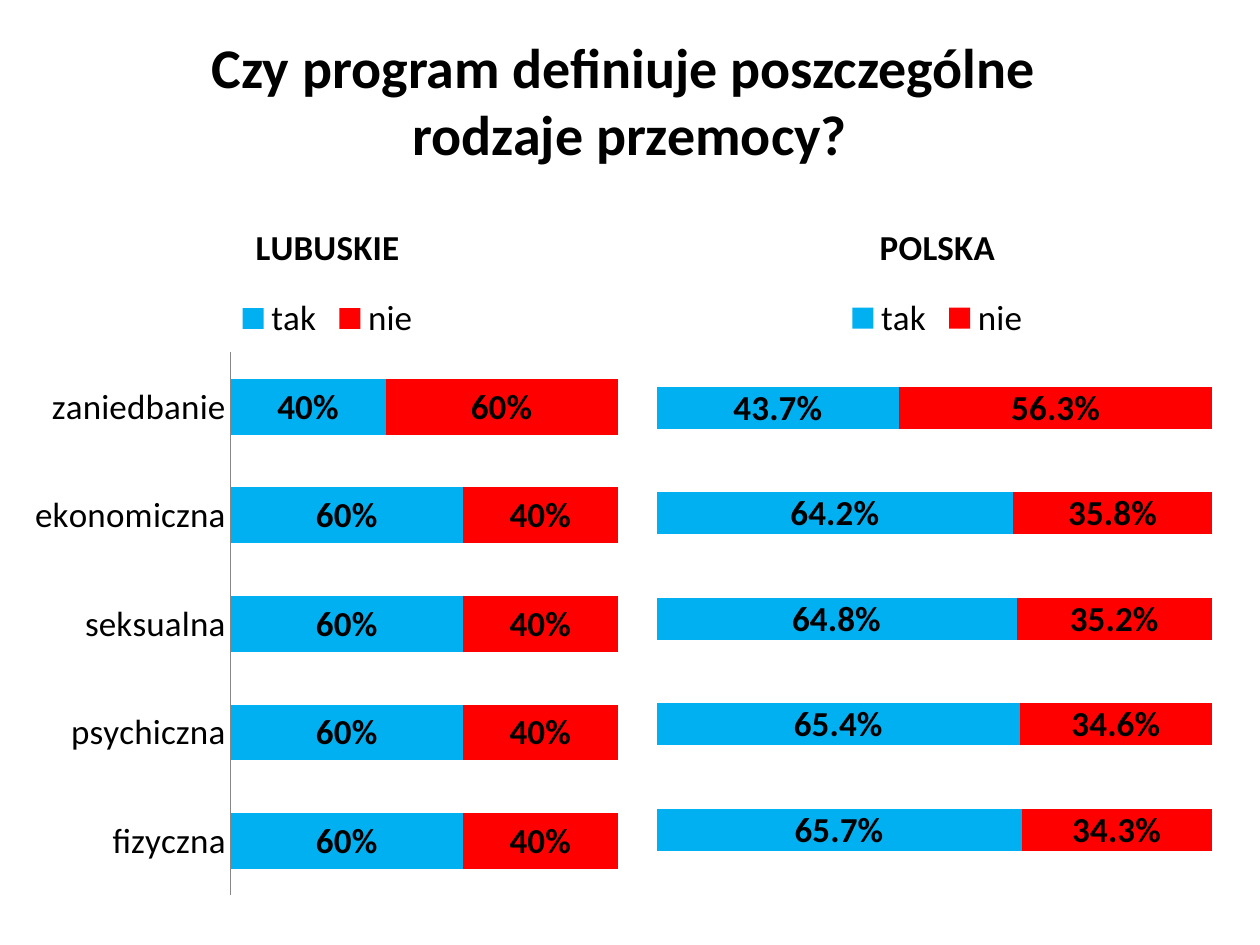
from lxml import etree
from pptx import Presentation
from pptx.chart.data import CategoryChartData as ChartData
from pptx.dml.color import RGBColor
from pptx.enum.chart import XL_CHART_TYPE as ChartType
from pptx.enum.chart import XL_LABEL_POSITION as LabelPosition
from pptx.enum.chart import XL_LEGEND_POSITION as LegendPosition
from pptx.enum.chart import XL_TICK_MARK as TickMark
from pptx.enum.text import MSO_ANCHOR as Anchor
from pptx.enum.text import PP_ALIGN as Align
from pptx.oxml.ns import qn
from pptx.util import Inches, Pt

# Content
FONT = "Calibri"
COLORS = {"text": "000000", "tak": "00B0F0", "nie": "FF0000", "axis": "878787"}
TITLE = ["Czy program definiuje poszczególne ", "rodzaje przemocy?"]
KINDS = ["fizyczna", "psychiczna", "seksualna", "ekonomiczna", "zaniedbanie"]
CHARTS = [
    {"title": "LUBUSKIE", "at": (0.2, 1.55, 4.8, 5.67), "format": "0%",
     "yes": [0.6, 0.6, 0.6, 0.6, 0.4], "digits": 1, "gap": 95,
     "labelled": True, "plot": (0.34, 0.22, 0.64, 0.76)},
    {"title": "POLSKA", "at": (5.07, 1.55, 4.74, 5.51), "format": "0.0%",
     "yes": [0.657, 0.654, 0.648, 0.642, 0.437], "digits": 3, "gap": 150,
     "labelled": False, "plot": (0.03, 0.23, 0.93, 0.76)},
]


def color(name):
    return RGBColor.from_string(COLORS[name])


def format_font(font, size=20, bold=False):
    font.name, font.size, font.bold = FONT, Pt(size), bold
    font.color.rgb = color("text")


def write(frame, lines, size=20, bold=True, align=Align.CENTER):
    for number, line in enumerate(lines):
        para = frame.add_paragraph() if number else frame.paragraphs[0]
        para.alignment = align
        span = para.add_run()
        span.text = line
        format_font(span.font, size, bold)


def place_plot(chart, edges):
    """Fix the inner plot area as fractions of the chart."""
    area = chart.plots[0]._element.getparent()
    layout = area.find(qn("c:layout"))
    if layout is None:
        layout = etree.Element(qn("c:layout"))
        area.insert(0, layout)
    manual = etree.SubElement(layout, qn("c:manualLayout"))
    settings = [("layoutTarget", "inner"), ("xMode", "edge"), ("yMode", "edge")]
    settings += zip("xywh", edges)
    for tag, value in settings:
        etree.SubElement(manual, qn(f"c:{tag}")).set("val", str(value))


def add_bars(page, item):
    data = ChartData(number_format=item["format"])
    data.categories = KINDS if item["labelled"] else range(1, len(KINDS) + 1)
    data.add_series("tak", item["yes"])
    data.add_series("nie", [round(1 - share, item["digits"]) for share in item["yes"]])
    chart = page.shapes.add_chart(
        ChartType.BAR_STACKED_100, *map(Inches, item["at"]), data).chart
    format_font(chart.font, 10)

    # Title and legend
    write(chart.chart_title.text_frame, [item["title"]])
    chart.chart_title.include_in_layout = False
    chart.has_legend = True
    chart.legend.position = LegendPosition.TOP
    chart.legend.include_in_layout = False
    format_font(chart.legend.font)

    # Axes
    chart.value_axis.has_major_gridlines = False
    chart.value_axis.visible = False
    axis = chart.category_axis
    axis.visible = item["labelled"]
    axis.major_tick_mark = axis.minor_tick_mark = TickMark.NONE
    axis.format.line.color.rgb = color("axis")
    format_font(axis.tick_labels.font)

    # Bars and their labels
    plot = chart.plots[0]
    plot.gap_width, plot.overlap = item["gap"], 100
    for series in plot.series:
        series.format.fill.solid()
        series.format.fill.fore_color.rgb = color(series.name)
        labels = series.data_labels
        labels.show_value = True
        labels.number_format = item["format"]
        labels.number_format_is_linked = False
        labels.position = LabelPosition.CENTER
        format_font(labels.font, bold=True)
    place_plot(chart, item["plot"])


def main():
    deck = Presentation()
    deck.slide_width, deck.slide_height = Inches(10), Inches(7.5)
    page = deck.slides.add_slide(deck.slide_layouts[5])

    # Heading
    box = page.shapes.title
    box.left, box.top, box.width, box.height = map(Inches, (0, 0.21, 10, 1.18))
    box.text_frame.vertical_anchor = Anchor.TOP
    write(box.text_frame, TITLE, size=32)

    # Charts side by side
    for item in CHARTS:
        add_bars(page, item)
    deck.save("out.pptx")


if __name__ == "__main__":
    main()
